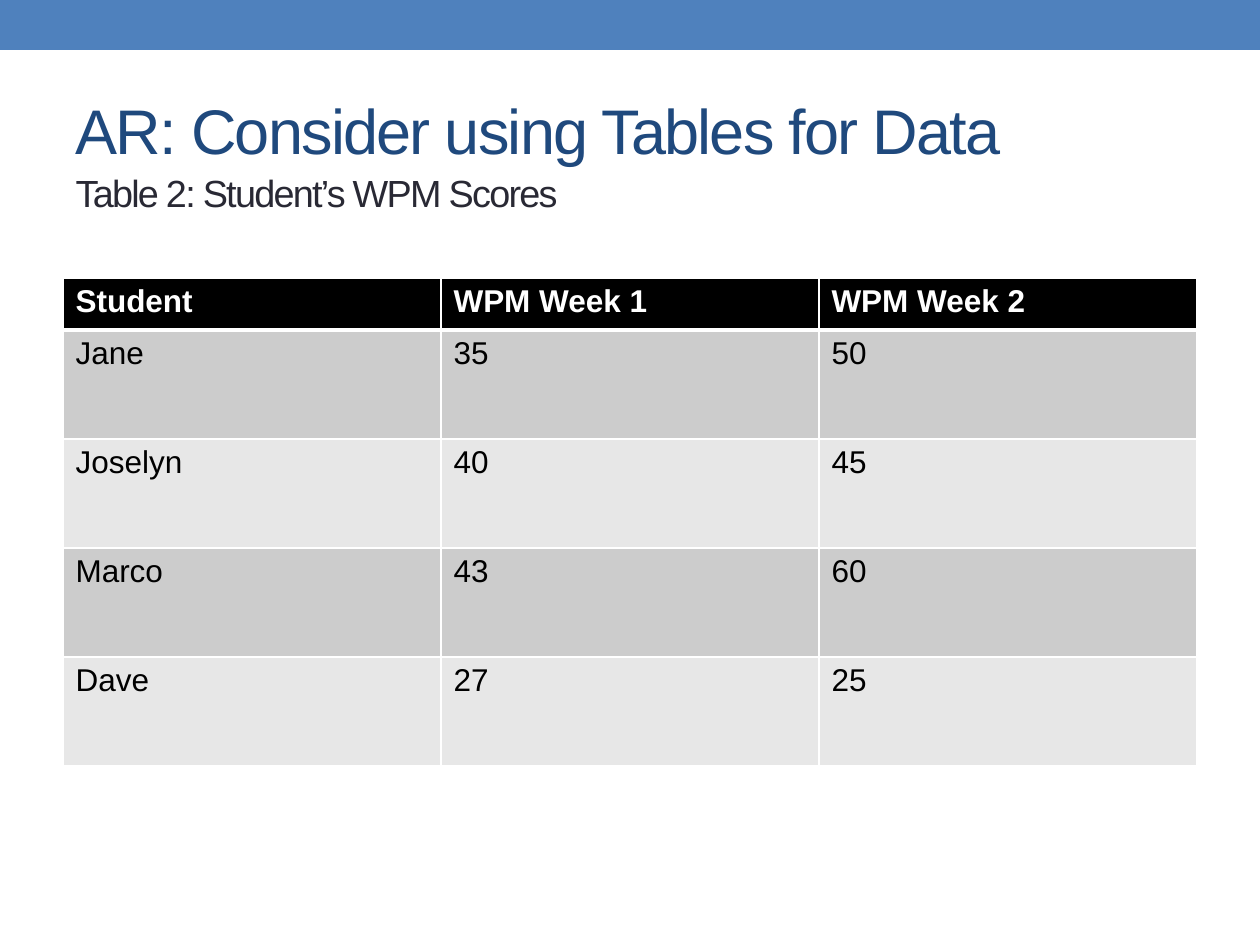
from pptx import Presentation
from pptx.dml.color import RGBColor
from pptx.enum.shapes import MSO_SHAPE as Shape
from pptx.enum.text import MSO_ANCHOR as Anchor, PP_ALIGN as Align
from pptx.oxml.ns import qn
from pptx.util import Pt
from lxml.etree import SubElement

PX = 914400 // 126
SLIDE_WIDTH, SLIDE_HEIGHT = 1260, 945
HEADER_HEIGHT, ROW_HEIGHT = 52, 109
SCORES = [
    ("Student", "WPM Week 1", "WPM Week 2"),
    ("Jane", "35", "50"),
    ("Joselyn", "40", "45"),
    ("Marco", "43", "60"),
    ("Dave", "27", "25"),
]


def px(*lengths):
    return [length * PX for length in lengths]


def color(value):
    return RGBColor.from_string(value)


def paint(target, value):
    target.fill.solid()
    target.fill.fore_color.rgb = color(value)


def format_text(paragraph, size, value, bold=False):
    paragraph.alignment = Align.LEFT
    for run in paragraph.runs:
        run.font.name = "Arial"
        run.font.size = Pt(size)
        run.font.bold = bold
        run.font.color.rgb = color(value)


def add_banner(slide):
    banner = slide.shapes.add_shape(Shape.RECTANGLE, *px(0, 0, SLIDE_WIDTH, 50))
    banner.shadow.inherit = False
    banner.line.fill.background()
    paint(banner, "4F81BD")


def add_heading(slide, heading, caption):
    title = slide.shapes.title
    title.left, title.top, title.width, title.height = px(63, 86, 1134, 191)
    frame = title.text_frame
    frame.text = f"{heading}\n{caption}"
    frame.word_wrap = True
    frame.vertical_anchor = Anchor.TOP
    frame.margin_top = 5 * PX
    styles = [(36, "1F497D"), (21.6, "292934")]
    for paragraph, (size, value) in zip(frame.paragraphs, styles):
        format_text(paragraph, size, value)
        for run in paragraph.runs:
            run.font._element.set("spc", "-100")
    frame.paragraphs[1].space_before = Pt(2)


def add_borders(cell, top, bottom):
    properties = cell._tc.get_or_add_tcPr()
    widths = {"a:lnL": 1, "a:lnR": 1, "a:lnT": top, "a:lnB": bottom}
    for position, (side, width) in enumerate(widths.items()):
        border = SubElement(properties, qn(side), w=str(Pt(width)))
        fill = SubElement(border, qn("a:solidFill"))
        SubElement(fill, qn("a:srgbClr"), val="FFFFFF")
        properties.insert(position, border)


def add_scores(slide, scores):
    columns = len(scores[0])
    height = HEADER_HEIGHT + ROW_HEIGHT * (len(scores) - 1)
    frame = slide.shapes.add_table(len(scores), columns, *px(63, 278, 1134, height))
    table = frame.table
    for row, values in enumerate(scores):
        header = row == 0
        table.rows[row].height = (HEADER_HEIGHT if header else ROW_HEIGHT) * PX
        background = "000000" if header else ("E7E7E7", "CCCCCC")[row % 2]
        for column, value in enumerate(values):
            cell = table.cell(row, column)
            cell.text_frame.text = value
            format_text(cell.text_frame.paragraphs[0], 18,
                        "FFFFFF" if header else "000000", header)
            paint(cell, background)
            add_borders(cell, top=3 if row == 1 else 1, bottom=3 if header else 1)


def main():
    deck = Presentation()
    deck.slide_width, deck.slide_height = px(SLIDE_WIDTH, SLIDE_HEIGHT)
    slide = deck.slides.add_slide(deck.slide_layouts.get_by_name("Title Only"))
    add_banner(slide)
    add_heading(slide, "AR: Consider using Tables for Data",
                "Table 2: Student’s WPM Scores")
    add_scores(slide, SCORES)
    deck.save("out.pptx")


if __name__ == "__main__":
    main()
